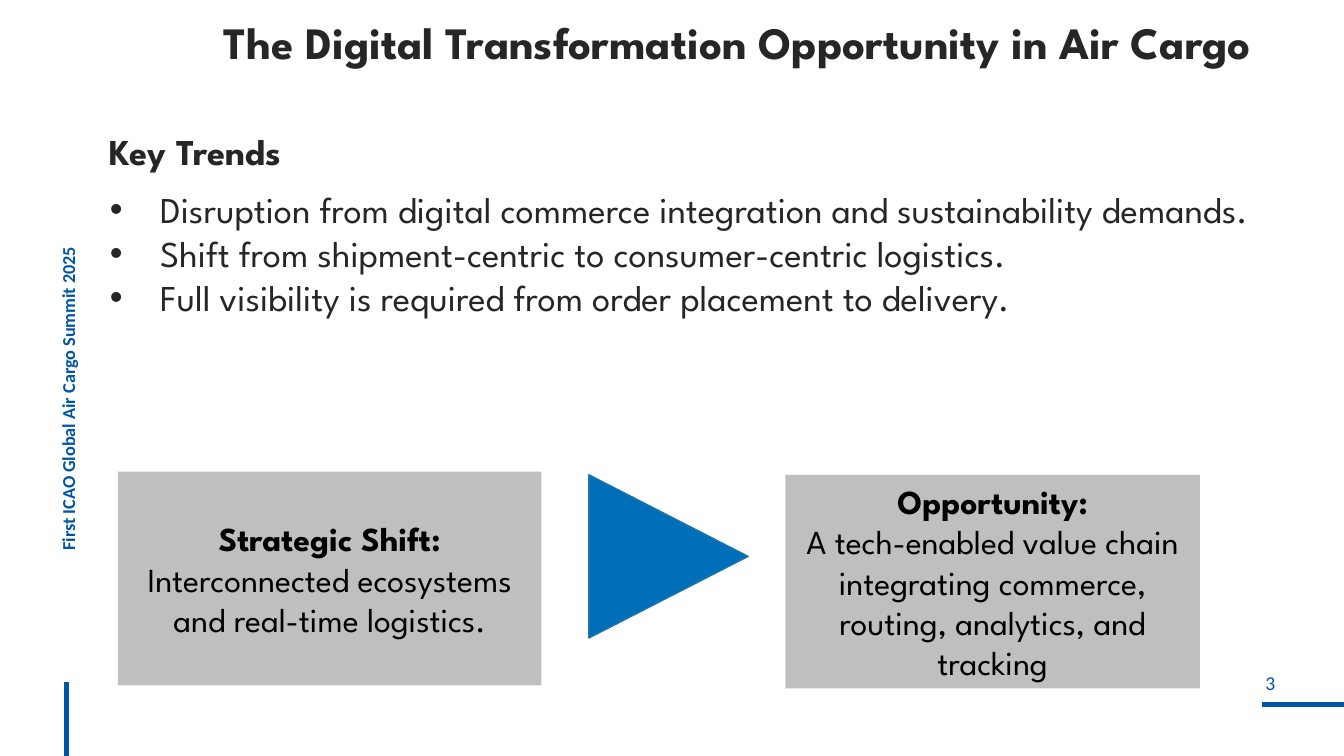
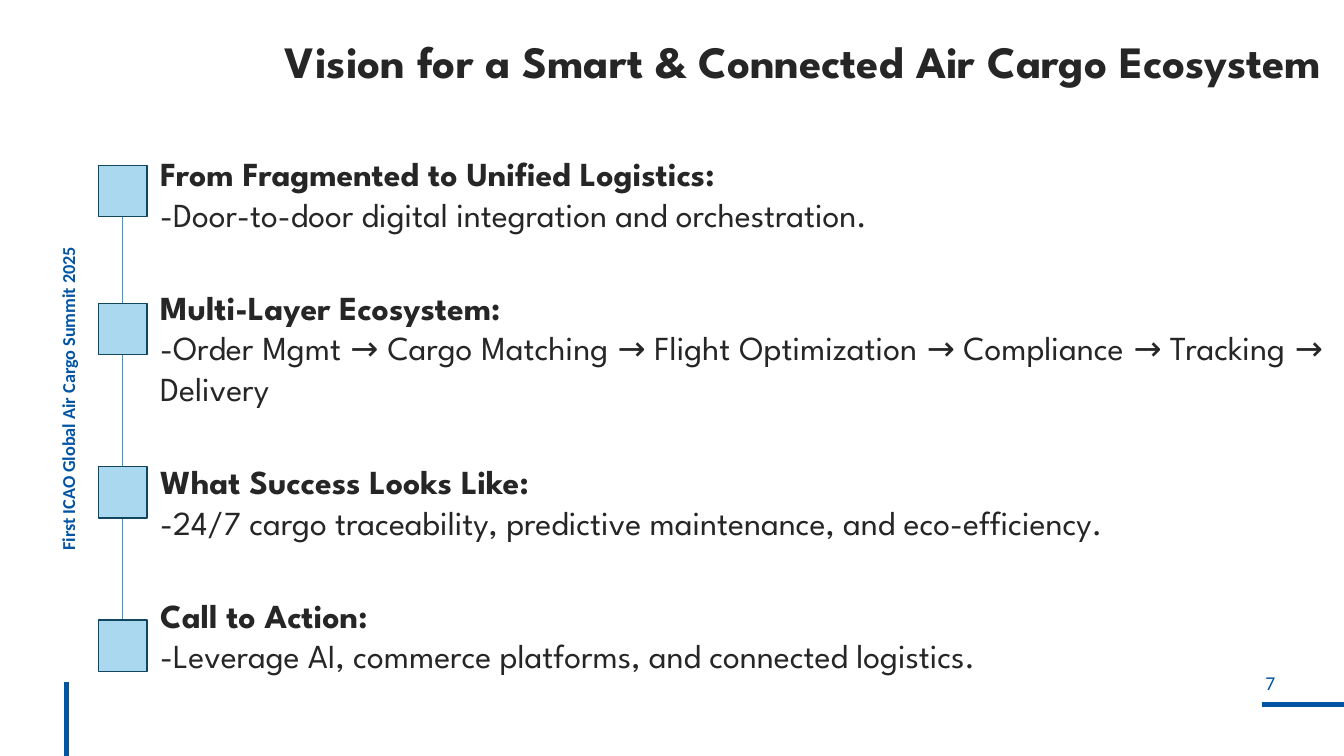
from lxml.etree import SubElement
from pptx import Presentation
from pptx.dml.color import RGBColor
from pptx.enum.shapes import MSO_CONNECTOR, MSO_SHAPE
from pptx.enum.text import MSO_ANCHOR, MSO_AUTO_SIZE, PP_ALIGN
from pptx.oxml.ns import qn
from pptx.util import Inches, Pt

BLUE, INK, BLACK = "0055A5", "262626", "000000"
GREY, SKY, NAVY = "BFBFBF", "A9D8EF", "12455F"
ARROW, EDGE, THREAD = "006EB9", "1D76A3", "289DD8"
HEAD, SMALL = "League Spartan", "Calibri"
SUMMIT = "First ICAO Global Air Cargo Summit 2025"


def color(code):
    return RGBColor.from_string(code)


def apply(target, values):
    for name, value in values.items():
        setattr(target, name, value)


class Deck:
    """Holds the style and the current slide."""

    def __init__(self):
        self.prs = Presentation()
        apply(self.prs, {"slide_width": Inches(13.33), "slide_height": Inches(7.5)})
        self.slide = None

    def page(self, number, title, box, align):
        self.slide = self.prs.slides.add_slide(self.prs.slide_layouts[5])
        # Shared side and footer marks
        self.line(12.52, 6.99, 13.33, 6.99, BLUE, 3)
        self.line(0.66, 6.77, 0.66, 7.5, BLUE, 3)
        num = self.text((12, 6.66, 1.2, 0.33), [(number, {})], 14, BLUE,
                        SMALL, PP_ALIGN.CENTER)
        apply(num.text_frame, {"word_wrap": False, "margin_left": 0, "margin_top": 0,
                               "margin_right": 0, "margin_bottom": 0})
        side = self.text((-1.87, 2.83, 5.14, 0.32),
                         [(SUMMIT, {"bold": True, "lead": 0.9})],
                         13, BLUE, SMALL, PP_ALIGN.LEFT)
        side.rotation = 270
        # Title
        head = self.slide.shapes.title
        for name, value in zip(("left", "top", "width", "height"), box):
            setattr(head, name, Inches(value))
        self.fill_text(head, [(title, {"bold": True})], 32, INK, HEAD, align)

    def line(self, x1, y1, x2, y2, code, width):
        line = self.slide.shapes.add_connector(
            MSO_CONNECTOR.STRAIGHT, *map(Inches, (x1, y1, x2, y2)))
        line.line.color.rgb = color(code)
        line.line.width = Pt(width)
        SubElement(line._element.spPr, qn("a:effectLst"))

    def shape(self, kind, box, fill, edge=None):
        shape = self.slide.shapes.add_shape(kind, *map(Inches, box))
        shape.shadow.inherit = False
        shape.fill.solid()
        shape.fill.fore_color.rgb = color(fill)
        if edge:
            shape.line.color.rgb = color(edge)
            shape.line.width = Pt(1)
        else:
            shape.line.fill.background()
        return shape

    def text(self, box, paras, size, code=INK, face=HEAD, align=PP_ALIGN.JUSTIFY):
        shape = self.slide.shapes.add_textbox(*map(Inches, box))
        self.fill_text(shape, paras, size, code, face, align)
        return shape

    def card(self, box, head, body):
        shape = self.shape(MSO_SHAPE.RECTANGLE, box, GREY)
        self.fill_text(shape, [(head, {"bold": True}), (body, {})], 24, BLACK,
                       HEAD, PP_ALIGN.CENTER, MSO_ANCHOR.MIDDLE)

    def fill_text(self, shape, paras, size, code, face, align,
                  anchor=MSO_ANCHOR.TOP):
        frame = shape.text_frame
        apply(frame, {"word_wrap": True, "auto_size": MSO_AUTO_SIZE.NONE,
                      "vertical_anchor": anchor})
        for i, (words, style) in enumerate(paras):
            para = frame.add_paragraph() if i else frame.paragraphs[0]
            para.text = words
            apply(para, {"alignment": align, "space_before": Pt(style.get("gap", 0)),
                         "line_spacing": style.get("lead", 1.0)})
            if style.get("bullet"):
                self.bullet(para)
            apply(para.runs[0].font, {"name": face, "size": Pt(size),
                                      "bold": style.get("bold", False)})
            para.runs[0].font.color.rgb = color(code)

    def bullet(self, para):
        props = para._p.get_or_add_pPr()
        props.set("marL", str(Inches(0.5)))
        props.set("indent", str(-Inches(0.5)))
        SubElement(props, qn("a:buFont")).set("typeface", "Arial")
        SubElement(props, qn("a:buChar")).set("char", "•")


def trends(deck):
    deck.page("3", "The Digital Transformation Opportunity in Air Cargo",
              (2.12, 0.1, 11.33, 0.64), PP_ALIGN.LEFT)
    # Key trends
    points = ["Disruption from digital commerce integration and sustainability demands.",
              "Shift from shipment-centric to consumer-centric logistics.",
              "Full visibility is required from order placement to delivery."]
    paras = [("Key Trends", {"bold": True})]
    for i, point in enumerate(points):
        paras.append((point, {"bullet": True, "gap": 0 if i else 10.7}))
    deck.text((0.99, 1.23, 11.62, 2.88), paras, 26)
    # Shift leading to opportunity
    deck.card((1.17, 4.68, 4.2, 2.12), "Strategic Shift:",
              "Interconnected ecosystems and real-time logistics.")
    deck.card((7.79, 4.71, 4.11, 2.12), "Opportunity:",
              "A tech-enabled value chain integrating commerce, routing, "
              "analytics, and tracking")
    arrow = deck.shape(MSO_SHAPE.ISOSCELES_TRIANGLE, (5.82, 4.73, 1.62, 1.58),
                       ARROW, EDGE)
    arrow.rotation = 90


def vision(deck):
    deck.page("7", "Vision for a Smart & Connected Air Cargo Ecosystem",
              (1.05, 0.28, 12.17, 0.64), PP_ALIGN.RIGHT)
    # Timeline
    deck.line(1.21, 2.15, 1.21, 6.41, THREAD, 0.5)
    for top in (1.64, 3.01, 4.63, 6.15):
        deck.shape(MSO_SHAPE.RECTANGLE, (0.98, top, 0.48, 0.51), SKY, NAVY)
    # Steps
    steps = [("From Fragmented to Unified Logistics:",
              "-Door-to-door digital integration and orchestration."),
             ("Multi-Layer Ecosystem:",
              "-Order Mgmt → Cargo Matching → Flight Optimization → "
              "Compliance → Tracking → Delivery"),
             ("What Success Looks Like:",
              "-24/7 cargo traceability, predictive maintenance, and eco-efficiency."),
             ("Call to Action:",
              "-Leverage AI, commerce platforms, and connected logistics.")]
    paras = []
    for i, (head, body) in enumerate(steps):
        paras += [(head, {"bold": True, "gap": 38 if i else 0}), (body, {})]
    deck.text((1.49, 1.47, 11.73, 5.36), paras, 24)


def main():
    deck = Deck()
    trends(deck)
    vision(deck)
    deck.prs.save("out.pptx")


if __name__ == "__main__":
    main()
